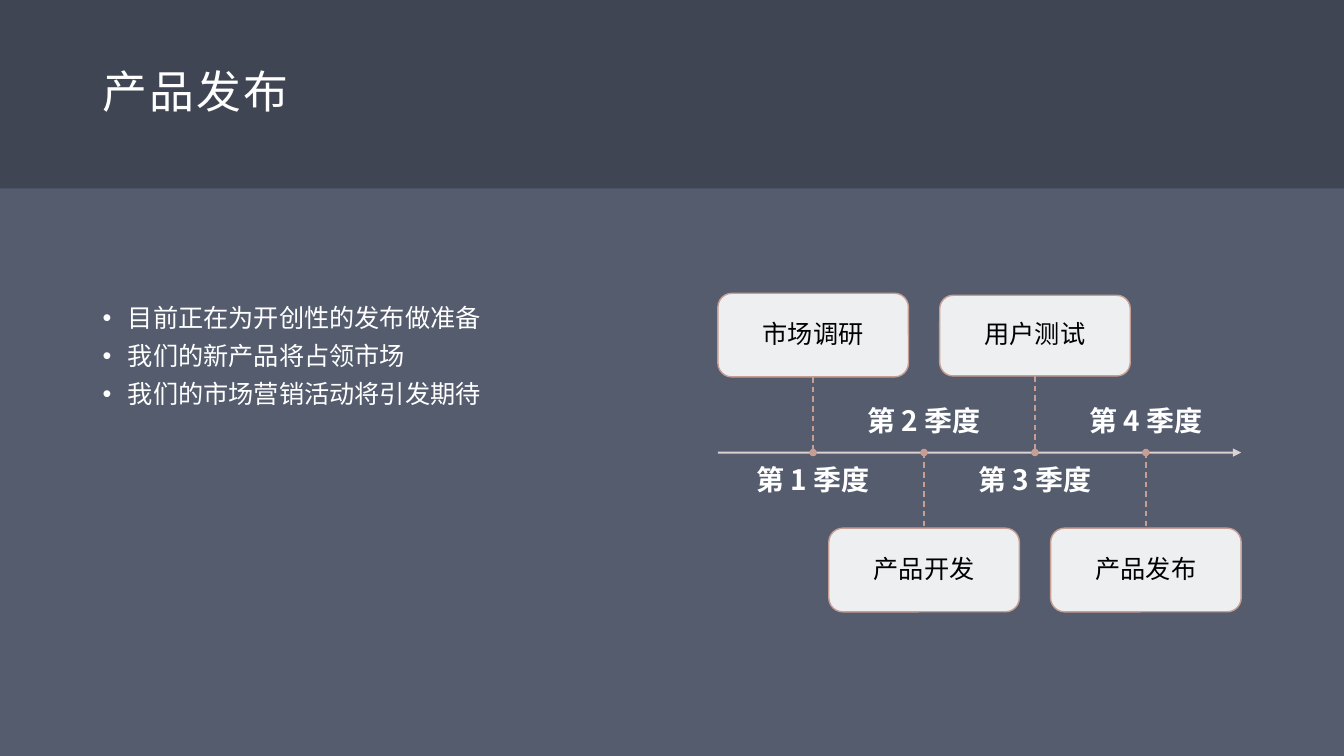
from pptx import Presentation
from pptx.dml.color import RGBColor
from pptx.enum import dml, shapes, text
from pptx.oxml.ns import qn
from pptx.util import Inches, Pt
from lxml import etree

# Content
TITLE = "产品发布"
BULLETS = ["目前正在为开创性的发布做准备", "我们的新产品将占领市场", "我们的市场营销活动将引发期待"]
MILESTONES = [  # quarter, activity, card top, card height
    ("第 1 季度", "市场调研", 2.91, 0.83),
    ("第 2 季度", "产品开发", 5.24, 0.83),
    ("第 3 季度", "用户测试", 2.93, 0.80),
    ("第 4 季度", "产品发布", 5.24, 0.83),
]

# Look and layout
FONT = "Noto Sans CJK SC"
WHITE, BLACK, ROSE, PALE = "FFFFFF", "000000", "C69E93", "EADFDC"
BAND_HEIGHT, MARGIN = 1.87, 0.92
AXIS_LEFT, AXIS_RIGHT, AXIS_Y = 7.12, 12.31, 4.49
CARD_WIDTH, DOT = 1.89, 0.06
LABEL_WIDTH, LABEL_HEIGHT = 1.67, 0.45
LABEL_ABOVE, LABEL_BELOW = 3.89, 4.63
FIRST_CENTRE = AXIS_LEFT + CARD_WIDTH / 2
LAST_CENTRE = AXIS_RIGHT - CARD_WIDTH / 2
STEP = (LAST_CENTRE - FIRST_CENTRE) / (len(MILESTONES) - 1)


def colour(fill, value, opacity=100):
    fill.solid()
    fill.fore_color.rgb = RGBColor.from_string(value)
    if opacity < 100:
        tint = fill._xPr.find(qn("a:solidFill"))[0]
        etree.SubElement(tint, qn("a:alpha"), val=str(opacity * 1000))


def write(shape, lines, size, value, align, anchor, inset=(0, 0), bold=False, before=0, bullet=False):
    frame = shape.text_frame
    frame.word_wrap = True
    frame.vertical_anchor = anchor
    frame.margin_left = frame.margin_right = Inches(inset[0])
    frame.margin_top = frame.margin_bottom = Inches(inset[1])
    frame.text = "\n".join(lines)
    for index, para in enumerate(frame.paragraphs):
        para.alignment = align
        para.line_spacing = 0.9
        if index:
            para.space_before = Pt(before)
        if bullet:
            props = para._p.get_or_add_pPr()
            props.set("marL", str(Inches(0.25)))
            props.set("indent", str(Inches(-0.25)))
            etree.SubElement(props, qn("a:buFont"), typeface="Arial")
            etree.SubElement(props, qn("a:buChar"), char="•")
        for span in para.runs:
            span.font.size, span.font.bold, span.font.name = Pt(size), bold, FONT
            colour(span.font.fill, value)
            etree.SubElement(span._r.get_or_add_rPr(), qn("a:ea"), typeface=FONT)
    return frame


def add_box(left, top, width, height):
    return page.shapes.add_textbox(Inches(left), Inches(top), Inches(width), Inches(height))


def add_form(kind, left, top, width, height, fill, outline=None, opacity=100):
    form = page.shapes.add_shape(kind, Inches(left), Inches(top), Inches(width), Inches(height))
    form.shadow.inherit = False
    colour(form.fill, fill, opacity)
    if outline:
        colour(form.line.fill, outline)
        form.line.width = Pt(1)
    else:
        form.line.fill.background()
    return form


def add_line(x1, y1, x2, y2, value, width, opacity=100):
    line = page.shapes.add_connector(
        shapes.MSO_CONNECTOR.STRAIGHT, Inches(x1), Inches(y1), Inches(x2), Inches(y2))
    colour(line.line.fill, value, opacity)
    line.line.width = Pt(width)
    etree.SubElement(line._element.spPr, qn("a:effectLst"))
    return line


deck = Presentation()
deck.slide_width, deck.slide_height = Inches(13.33), Inches(7.5)
page = deck.slides.add_slide(deck.slide_layouts[6])
colour(page.background.fill, "545C6E")
LEFT, CENTRE = text.PP_ALIGN.LEFT, text.PP_ALIGN.CENTER
TOP, MIDDLE, BOTTOM = text.MSO_ANCHOR.TOP, text.MSO_ANCHOR.MIDDLE, text.MSO_ANCHOR.BOTTOM

# Title band
add_form(shapes.MSO_SHAPE.RECTANGLE, 0, 0, 13.33, BAND_HEIGHT, "3F4552")
heading = write(add_box(MARGIN, 0, 8.58, BAND_HEIGHT), [TITLE], 32, WHITE, LEFT, MIDDLE, (0.1, 0.05))
heading.paragraphs[0].runs[0]._r.rPr.set("spc", "150")

# Bullet list
write(add_box(MARGIN, 2.98, 5.67, 3.5), BULLETS, 18, WHITE, LEFT, TOP, (0.1, 0.05),
      before=8, bullet=True)

# Timeline axis
axis = add_line(AXIS_LEFT, AXIS_Y, AXIS_RIGHT, AXIS_Y, PALE, 1.5, opacity=90)
etree.SubElement(axis.line._get_or_add_ln(), qn("a:tailEnd"), type="triangle")

# Milestones: cards alternate above and below the axis, labels take the other side
for index, (quarter, activity, card_top, card_height) in enumerate(MILESTONES):
    centre = FIRST_CENTRE + index * STEP
    above = index % 2 == 0
    card = add_form(shapes.MSO_SHAPE.ROUNDED_RECTANGLE, centre - CARD_WIDTH / 2, card_top,
                    CARD_WIDTH, card_height, WHITE, ROSE, opacity=90)
    write(card, [activity], 18, BLACK, CENTRE, MIDDLE, (0.17, 0.17))
    card_edge = card_top + card_height if above else card_top
    stem = add_line(centre, min(card_edge, AXIS_Y), centre, max(card_edge, AXIS_Y), ROSE, 1)
    stem.line.dash_style = dml.MSO_LINE.DASH
    label = add_box(centre - LABEL_WIDTH / 2, LABEL_BELOW if above else LABEL_ABOVE,
                    LABEL_WIDTH, LABEL_HEIGHT)
    write(label, [quarter], 20, WHITE, CENTRE, TOP if above else BOTTOM, bold=True)
    add_form(shapes.MSO_SHAPE.OVAL, centre - DOT / 2, AXIS_Y - DOT / 2, DOT, DOT, ROSE, ROSE)

deck.save("out.pptx")
